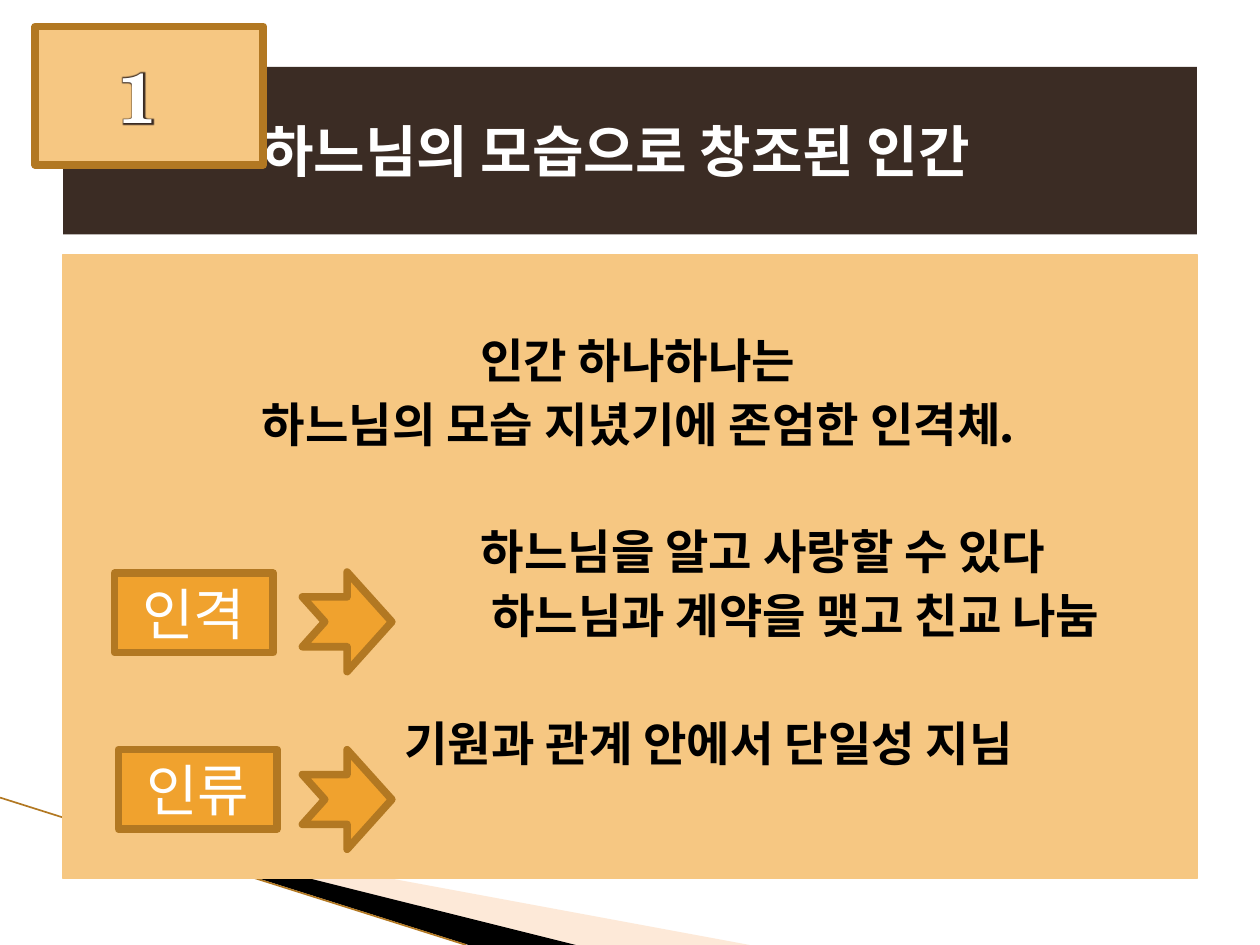
"""Build the slide on the human being created in the image of God."""
from lxml import etree
from pptx import Presentation
from pptx import util as u
from pptx.dml.color import RGBColor
from pptx.enum import shapes, text
from pptx.oxml import ns

COLORS = {
    "title": "3B2C24", "panel": "F6C782", "accent": "F0A22E", "edge": "B27822",
    "peach": "FBC99E", "black": "000000", "white": "FFFFFF",
}
FONT = "TeX Gyre Schola"


def paint(sp, fill, line=None, width=4.33):
    sp.fill.solid()
    sp.fill.fore_color.rgb = RGBColor.from_string(COLORS[fill])
    if line:
        sp.line.color.rgb = RGBColor.from_string(COLORS[line])
        sp.line.width = u.Pt(width)
    else:
        sp.line.fill.background()


def add_run(p, words, size, color, bold=False):
    r = p.add_run()
    r.text = words
    r.font.name = FONT
    r.font.size = u.Pt(size)
    r.font.bold = bold
    r.font.color.rgb = RGBColor.from_string(COLORS[color])
    return r


prs = Presentation()
prs.slide_width, prs.slide_height = u.Inches(10), u.Inches(7.5)
s = prs.slides.add_slide(prs.slide_layouts[1])

wedges = [
    ("peach", [(0.55, 6.5), (5.95, 7.5), (4.56, 7.5)]),
    ("black", [(0.53, 6.49), (4.57, 7.5), (3.72, 7.5)]),
]
for color, points in wedges:
    corners = [(u.Inches(x), u.Inches(y)) for x, y in points]
    builder = s.shapes.build_freeform(*corners[0])
    builder.add_line_segments(corners[1:], close=True)
    sp = builder.convert_to_shape()
    sp.shadow.inherit = False
    paint(sp, color)
    if color == "peach":
        rgb = sp.element.find(".//" + ns.qn("a:srgbClr"))
        etree.SubElement(rgb, ns.qn("a:alpha"), val="40000")

line = s.shapes.add_connector(
    shapes.MSO_CONNECTOR.STRAIGHT,
    u.Inches(0), u.Inches(6.33), u.Inches(3.7), u.Inches(7.5))
line.line.color.rgb = RGBColor.from_string(COLORS["edge"])
line.line.width = u.Pt(0.95)
etree.SubElement(line.element.spPr, ns.qn("a:effectLst"))

body = s.placeholders[1]
s.shapes.element.append(body.element)
body.left, body.top = u.Inches(0.5), u.Inches(2.02)
body.width, body.height = u.Inches(9), u.Inches(4.95)
paint(body, "panel", "panel", 0.75)
tf = body.text_frame
tf.auto_size = text.MSO_AUTO_SIZE.NONE
tf.vertical_anchor = text.MSO_ANCHOR.TOP
tf.margin_top = u.Inches(0.61)
center, left = text.PP_ALIGN.CENTER, text.PP_ALIGN.LEFT
verses = [
    ("인간 하나하나는", center, 0.12, 0),
    ("하느님의 모습 지녔기에 존엄한 인격체.", center, 0.12, 4),
    ("하느님을 알고 사랑할 수 있다", center, 2.11, 40.4),
    ("하느님과 계약을 맺고 친교 나눔", center, 2.62, 4),
    ("기원과 관계 안에서 단일성 지님", left, 2.61, 40.4),
]
for i, (words, align, indent, before) in enumerate(verses):
    p = tf.add_paragraph() if i else tf.paragraphs[0]
    pPr = p._p.get_or_add_pPr()
    pPr.set("marL", str(u.Inches(indent)))
    pPr.set("indent", "0")
    etree.SubElement(pPr, ns.qn("a:buNone"))
    p.alignment = align
    p.space_before = u.Pt(before)
    add_run(p, words, 27, "black", True)

title = s.shapes.title
s.shapes.element.append(title.element)
title.left, title.top = u.Inches(0.5), u.Inches(0.53)
title.width, title.height = u.Inches(9), u.Inches(1.33)
paint(title, "title")
tf = title.text_frame
tf.auto_size = text.MSO_AUTO_SIZE.NONE
tf.vertical_anchor = text.MSO_ANCHOR.MIDDLE
tf.margin_left = u.Inches(1.58)
p = tf.paragraphs[0]
p.alignment = left
add_run(p, "하느님의 모습으로 창조된 인간", 32, "white", True)

for top in (4.54, 5.95):
    sp = s.shapes.add_shape(
        shapes.MSO_SHAPE.NOTCHED_RIGHT_ARROW,
        u.Inches(2.4), u.Inches(top), u.Inches(0.71), u.Inches(0.79))
    sp.shadow.inherit = False
    paint(sp, "accent", "edge")

boxes = [
    ("인격", 0.91, 4.55, 1.26, 0.63, "accent", 32),
    ("인류", 0.94, 5.95, 1.26, 0.63, "accent", 32),
    ("1", 0.28, 0.21, 1.81, 1.1, "panel", 40),
]
for words, x, y, w, h, fill, size in boxes:
    sp = s.shapes.add_shape(
        shapes.MSO_SHAPE.RECTANGLE,
        u.Inches(x), u.Inches(y), u.Inches(w), u.Inches(h))
    sp.shadow.inherit = False
    paint(sp, fill, "edge")
    tf = sp.text_frame
    tf.word_wrap = True
    tf.vertical_anchor = text.MSO_ANCHOR.MIDDLE
    p = tf.paragraphs[0]
    p.alignment = center
    r = add_run(p, words, size, "white", words == "1")
    if words == "1":
        tf.margin_right = u.Inches(0.28)
        effects = etree.Element(ns.qn("a:effectLst"))
        glow = etree.SubElement(effects, ns.qn("a:glow"), rad=str(u.Pt(3)))
        etree.SubElement(glow, ns.qn("a:srgbClr"), val=COLORS["title"])
        r.font.fill
        r._r.rPr.find(ns.qn("a:solidFill")).addnext(effects)

prs.save("out.pptx")
